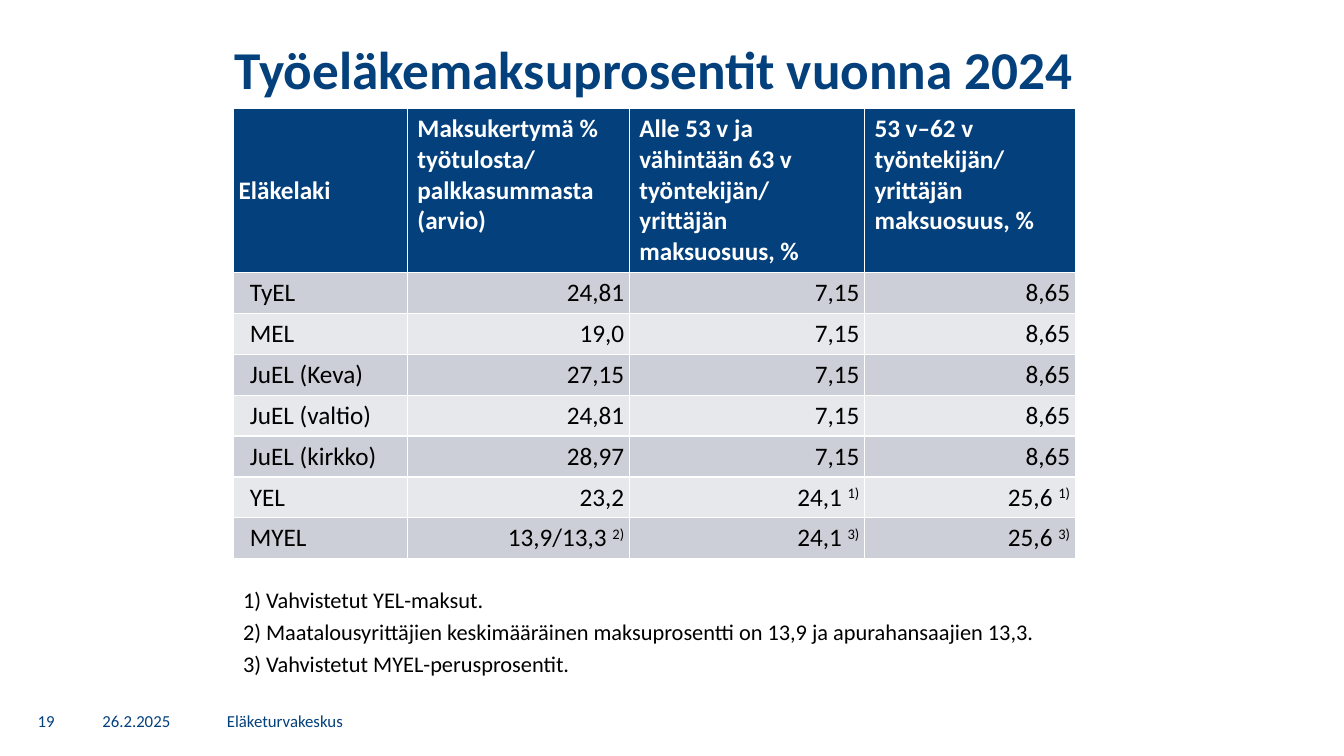
from pptx import Presentation
from pptx.dml.color import RGBColor
from pptx.enum.text import MSO_ANCHOR, MSO_AUTO_SIZE, PP_ALIGN
from pptx.util import Pt

THEME = {
    "font": "Calibri",
    "blue": RGBColor.from_string("03407C"),
    "white": RGBColor.from_string("FFFFFF"),
    "black": RGBColor.from_string("000000"),
    "bands": [RGBColor.from_string("CCCFD7"), RGBColor.from_string("E7E8EC")],
    "title_size": Pt(38),
    "table_size": Pt(18),
    "note_size": Pt(16),
    "footer_size": Pt(12),
}


def format_text(paragraph, size, color, bold=False, **layout):
    values = {"name": THEME["font"], "size": THEME[size], "bold": bold}
    for run in paragraph.runs:
        for name, value in values.items():
            setattr(run.font, name, value)
        run.font.color.rgb = THEME[color]
    for name, value in layout.items():
        setattr(paragraph, name, value)


def add_text(slide, box, lines, size, color, anchor, **layout):
    shape = slide.shapes.add_textbox(*(Pt(length) for length in box))
    frame = shape.text_frame
    frame.word_wrap = True
    frame.vertical_anchor = anchor
    frame.text = "\n".join(lines)
    for paragraph in frame.paragraphs:
        format_text(paragraph, size, color, **layout)


presentation = Presentation()
presentation.slide_width = Pt(960)
presentation.slide_height = Pt(540)
slide = presentation.slides.add_slide(presentation.slide_layouts[5])

# Title
title = slide.shapes.title
title_box = {"left": 0, "top": 26, "width": 934, "height": 51}
for name, value in title_box.items():
    setattr(title, name, Pt(value))
title.text_frame.text = "Työeläkemaksuprosentit vuonna 2024"
title.text_frame.auto_size = MSO_AUTO_SIZE.NONE
title.text_frame.vertical_anchor = MSO_ANCHOR.MIDDLE
format_text(title.text_frame.paragraphs[0], "title_size", "blue", bold=True,
            alignment=PP_ALIGN.CENTER, line_spacing=0.9)

# Table content: a "^" starts the superscript note mark
rows = [
    ["Eläkelaki", "Maksukertymä % työtulosta/ palkkasummasta (arvio)",
     "Alle 53 v ja vähintään 63 v työntekijän/ yrittäjän maksuosuus, %",
     "53 v–62 v työntekijän/ yrittäjän maksuosuus, %"],
    ["TyEL", "24,81", "7,15", "8,65"],
    ["MEL", "19,0", "7,15", "8,65"],
    ["JuEL (Keva)", "27,15", "7,15", "8,65"],
    ["JuEL (valtio)", "24,81", "7,15", "8,65"],
    ["JuEL (kirkko)", "28,97", "7,15", "8,65"],
    ["YEL", "23,2", "24,1 ^1)", "25,6 ^1)"],
    ["MYEL", "13,9/13,3 ^2)", "24,1 ^3)", "25,6 ^3)"],
]
column_widths = [124.5, 158.5, 168, 150.5]
header_height, row_height = 116, 29.25

# Table
table = slide.shapes.add_table(
    len(rows), len(column_widths), Pt(166.5), Pt(77.5), Pt(sum(column_widths)),
    Pt(header_height + row_height * (len(rows) - 1))).table
for column, width in zip(table.columns, column_widths):
    column.width = Pt(width)

for row_index, values in enumerate(rows):
    is_header = row_index == 0
    table.rows[row_index].height = Pt(header_height if is_header else row_height)
    for column_index, value in enumerate(values):
        is_label = column_index == 0
        cell = table.cell(row_index, column_index)
        cell.fill.solid()
        cell.fill.fore_color.rgb = (
            THEME["blue"] if is_header else THEME["bands"][(row_index - 1) % 2])
        if is_label or not is_header:
            cell.vertical_anchor = MSO_ANCHOR.MIDDLE
        if is_label:
            cell.margin_left = Pt(4 if is_header else 12)
            cell.margin_right = cell.margin_top = cell.margin_bottom = 0
        elif not is_header:
            cell.margin_left = cell.margin_right = Pt(3.6)

        paragraph = cell.text_frame.paragraphs[0]
        text, _, mark = value.partition("^")
        paragraph.add_run().text = text
        if mark:
            mark_run = paragraph.add_run()
            mark_run.text = mark
            mark_run._r.get_or_add_rPr().set("baseline", "30000")
        format_text(paragraph, "table_size", "white" if is_header else "black",
                    bold=is_header,
                    alignment=PP_ALIGN.LEFT if is_header or is_label else PP_ALIGN.RIGHT)

# Notes under the table
notes = [
    "1) Vahvistetut YEL-maksut.",
    "2) Maatalousyrittäjien keskimääräinen maksuprosentti on 13,9 ja apurahansaajien 13,3.",
    "3) Vahvistetut MYEL-perusprosentit.",
]
add_text(slide, (166.5, 411, 650, 76), notes, "note_size", "black",
         MSO_ANCHOR.TOP, line_spacing=1.2)

# Footer
footer_items = [
    ("19", 14.5, 37, PP_ALIGN.CENTER),
    ("26.2.2025", 66, 81.5, PP_ALIGN.LEFT),
    ("Eläketurvakeskus", 155, 739, PP_ALIGN.LEFT),
]
for text, left, width, alignment in footer_items:
    add_text(slide, (left, 500.5, width, 29), [text], "footer_size", "blue",
             MSO_ANCHOR.MIDDLE, alignment=alignment)

presentation.save("out.pptx")
